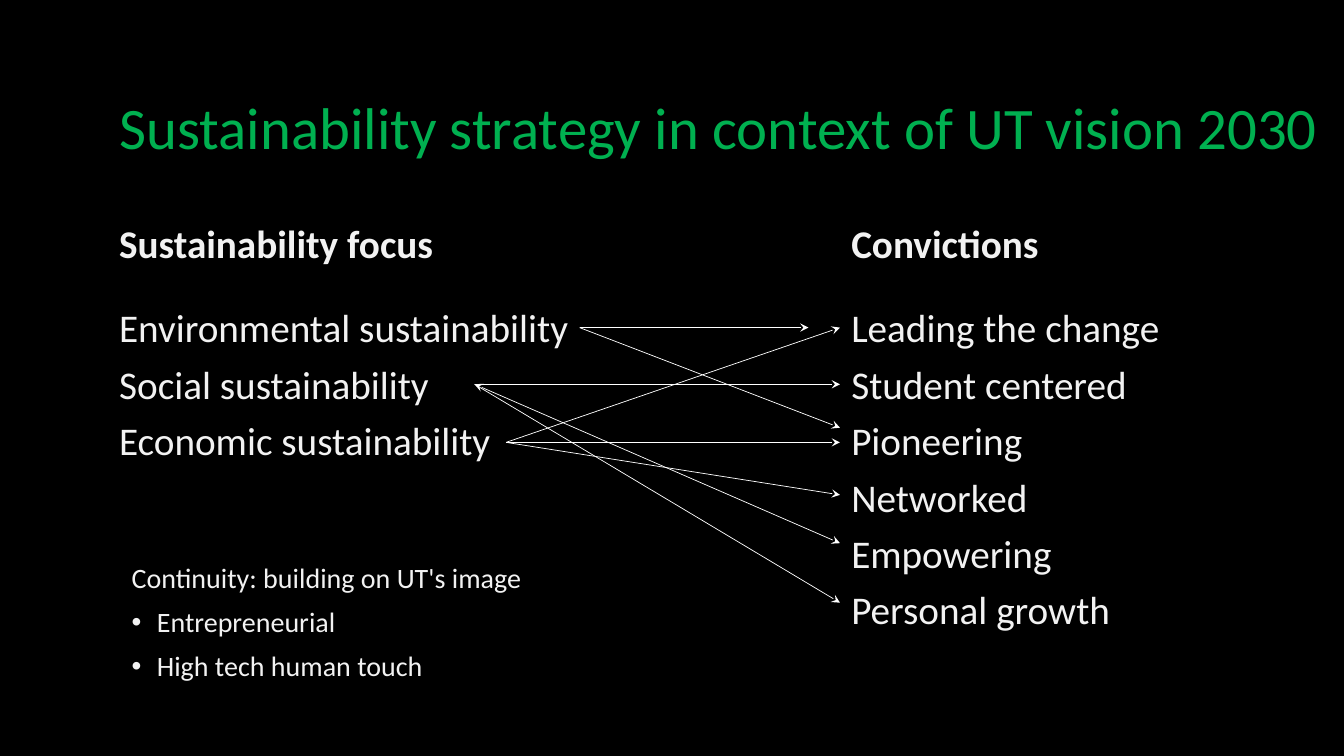
from dataclasses import dataclass

from lxml.etree import SubElement as Sub
from pptx import Presentation as Deck
from pptx.dml.color import RGBColor as Color
from pptx.enum.shapes import MSO_CONNECTOR as Link
from pptx.enum.text import MSO_ANCHOR as Anchor, MSO_AUTO_SIZE as Fit, PP_ALIGN as Align
from pptx.oxml.ns import qn
from pptx.util import Pt

HEX = {"back": "000000", "title": "00B050", "text": "F2F2F2", "line": "FFFFFF"}
FONT = "Calibri"
INDENT = 18


@dataclass
class Block:
    box: tuple[float, float, float, float]
    head: str
    items: list[str]
    size: float
    bold: bool = False
    gap: float = 10
    bullet: bool = False


@dataclass
class Arrow:
    start: tuple[float, float]
    end: tuple[float, float]
    both: bool = False


def color(name: str) -> Color:
    return Color.from_string(HEX[name])


def place(shape, box: tuple[float, float, float, float]) -> None:
    for side, value in zip(("left", "top", "width", "height"), box):
        setattr(shape, side, Pt(value))


def style(para, size: float, tint: str, bold: bool = False, gap: float = 0) -> None:
    para.alignment = Align.LEFT
    para.line_spacing = 0.9
    para.space_before = Pt(gap)
    form = {"name": FONT, "size": Pt(size), "bold": bold}
    for key, value in form.items():
        setattr(para.font, key, value)
    para.font.color.rgb = color(tint)


def add_bullet(para) -> None:
    props = para._p.get_or_add_pPr()
    props.set("marL", str(Pt(INDENT)))
    props.set("indent", str(-Pt(INDENT)))
    Sub(props, qn("a:buFont"), typeface="Arial")
    Sub(props, qn("a:buChar"), char="•")


def draw_title(slide, text: str, box: tuple[float, float, float, float]) -> None:
    title = slide.shapes.title
    place(title, box)
    frame = title.text_frame
    form = {"text": text, "word_wrap": True, "auto_size": Fit.NONE,
            "vertical_anchor": Anchor.MIDDLE}
    for key, value in form.items():
        setattr(frame, key, value)
    style(frame.paragraphs[0], 42, "title")


def draw_block(slide, block: Block) -> None:
    frame = slide.shapes.add_textbox(*map(Pt, block.box)).text_frame
    frame.word_wrap = True
    head = frame.paragraphs[0]
    head.text = block.head
    style(head, block.size, "text", block.bold)
    for row, item in enumerate(block.items):
        para = frame.add_paragraph()
        para.text = item
        if block.bullet:
            add_bullet(para)
        style(para, block.size, "text", gap=10 if row else block.gap)


def draw_arrow(slide, arrow: Arrow) -> None:
    ends = map(Pt, (*arrow.start, *arrow.end))
    link = slide.shapes.add_connector(Link.STRAIGHT, *ends)
    link.line.color.rgb = color("line")
    link.line.width = Pt(0.5)
    props = link.line._get_or_add_ln()
    for tag in ("a:headEnd", "a:tailEnd") if arrow.both else ("a:tailEnd",):
        Sub(props, qn(tag), type="stealth")
    Sub(link._element.spPr, qn("a:effectLst"))


# Text blocks
BLOCKS = [
    Block((78, 157, 408, 343), "Sustainability focus",
          ["Environmental sustainability", "Social sustainability",
           "Economic sustainability"], 28, bold=True, gap=30),
    Block((601, 157, 271.5, 343), "Convictions",
          ["Leading the change", "Student centered", "Pioneering", "Networked",
           "Empowering", "Personal growth"], 28, bold=True, gap=30),
    Block((87, 399.5, 330, 98.5), "Continuity: building on UT's image",
          ["Entrepreneurial", "High tech human touch"], 20, bullet=True),
]

# Arrows from each focus to its convictions
EDGE = 600
NATURE, SOCIAL, MONEY = (414, 234), (339, 274.5), (361.5, 316)
ARROWS = [
    Arrow(SOCIAL, (EDGE, 274.5)),
    Arrow(SOCIAL, (EDGE, 388), both=True),
    Arrow(SOCIAL, (EDGE, 430.5)),
    Arrow(MONEY, (EDGE, 234)),
    Arrow(MONEY, (EDGE, 353.5)),
    Arrow(MONEY, (EDGE, 316)),
    Arrow(NATURE, (577.5, 234)),
    Arrow(NATURE, (EDGE, 305.5)),
]


def main() -> None:
    deck = Deck()
    deck.slide_width, deck.slide_height = Pt(960), Pt(540)
    slide = deck.slides.add_slide(deck.slide_layouts[5])
    fill = slide.background.fill
    fill.solid()
    fill.fore_color.rgb = color("back")
    draw_title(slide, "Sustainability strategy in context of UT vision 2030",
               (78, 41, 882, 104.5))
    for block in BLOCKS:
        draw_block(slide, block)
    for arrow in ARROWS:
        draw_arrow(slide, arrow)
    deck.save("out.pptx")


if __name__ == "__main__":
    main()
